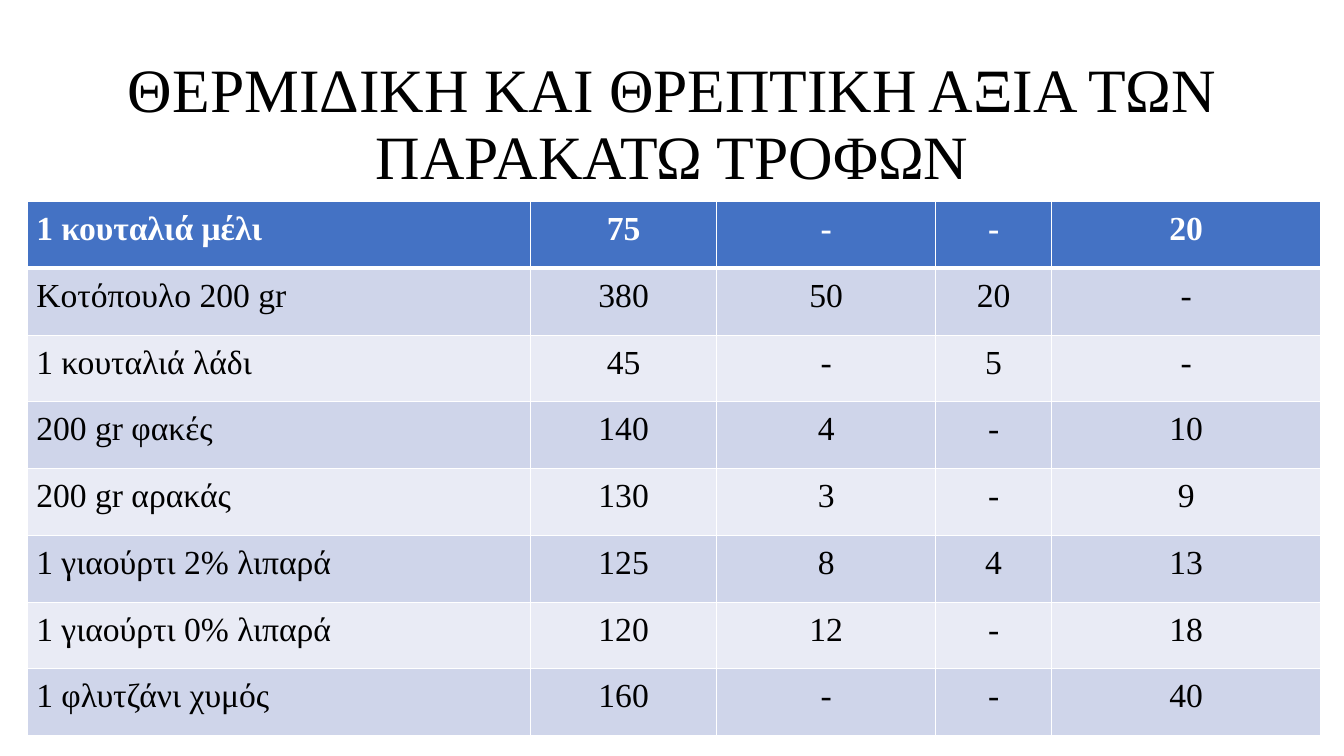
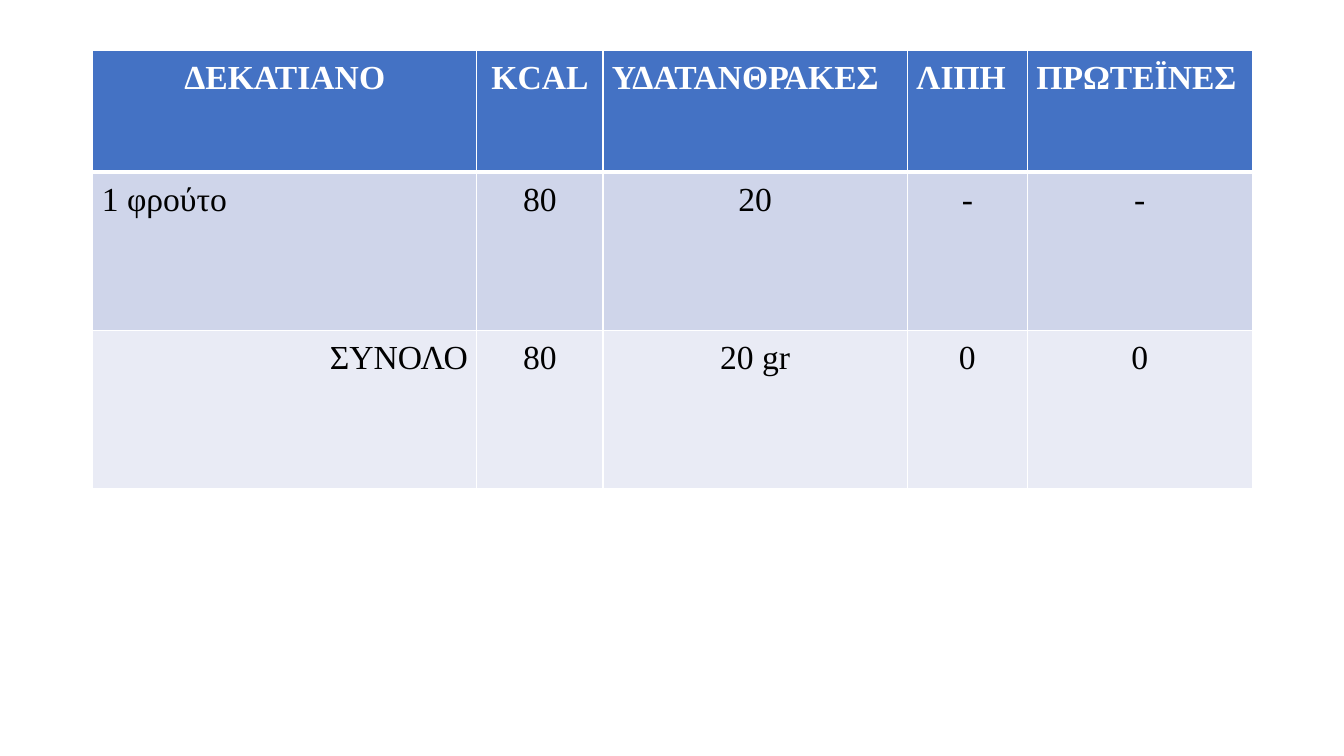
import pptx
import pptx.util
import pptx.dml.color
import pptx.enum.text
import pptx.oxml
import pptx.oxml.ns

Inches = pptx.util.Inches
Pt = pptx.util.Pt

FONT = "Times New Roman"
COLORS = {
    "header": "4472C4",
    "band_dark": "CFD5EA",
    "band_light": "E9EBF5",
    "white": "FFFFFF",
    "black": "000000",
}
ALIGN = {
    "l": pptx.enum.text.PP_ALIGN.LEFT,
    "c": pptx.enum.text.PP_ALIGN.CENTER,
    "r": pptx.enum.text.PP_ALIGN.RIGHT,
}
CELL_MARGIN = 0.09

# Each row: alignment of its cells, then their texts
FOOD_ROWS = [
    ("lcccc", ["1 κουταλιά μέλι", "75", "-", "-", "20"]),
    ("lcccc", ["Κοτόπουλο 200 gr", "380", "50", "20", "-"]),
    ("lcccc", ["1 κουταλιά λάδι", "45", "-", "5", "-"]),
    ("lcccc", ["200 gr φακές", "140", "4", "-", "10"]),
    ("lcccc", ["200 gr αρακάς", "130", "3", "-", "9"]),
    ("lcccc", ["1 γιαούρτι 2% λιπαρά", "125", "8", "4", "13"]),
    ("lcccc", ["1 γιαούρτι 0% λιπαρά", "120", "12", "-", "18"]),
    ("lcccc", ["1 φλυτζάνι χυμός", "160", "-", "-", "40"]),
]
SNACK_ROWS = [
    ("cclll", ["ΔΕΚΑΤΙΑΝΟ", "KCAL", "ΥΔΑΤΑΝΘΡΑΚΕΣ", "ΛΙΠΗ", "ΠΡΩΤΕΪΝΕΣ"]),
    ("lcccc", ["1 φρούτο", "80", "20", "-", "-"]),
    ("rcccc", ["ΣΥΝΟΛΟ", "80", "20 gr", "0", "0"]),
]


def color(name):
    return pptx.dml.color.RGBColor.from_string(COLORS[name])


def write_text(para, text, size, color_name, align, bold=False):
    para.alignment = ALIGN[align]
    span = para.add_run()
    span.text = text
    span.font.name = FONT
    span.font.size = Pt(size)
    span.font.bold = bold
    span.font.color.rgb = color(color_name)


def set_borders(cell, top, bottom):
    """White cell borders; top and bottom widths in points."""
    properties = cell._tc.get_or_add_tcPr()
    sides = [("lnL", 1), ("lnR", 1), ("lnT", top), ("lnB", bottom)]
    for index, (side, width) in enumerate(sides):
        line = pptx.oxml.parse_xml(
            f'<a:{side} {pptx.oxml.ns.nsdecls("a")} w="{Pt(width)}"><a:solidFill>'
            f'<a:srgbClr val="{COLORS["white"]}"/></a:solidFill></a:{side}>'
        )
        properties.insert(index, line)


def add_title(page, box, text):
    title = page.shapes.title
    title.left, title.top, title.width, title.height = map(Inches, box)
    frame = title.text_frame
    frame.word_wrap = True
    frame.auto_size = pptx.enum.text.MSO_AUTO_SIZE.NONE
    frame.vertical_anchor = pptx.enum.text.MSO_ANCHOR.MIDDLE
    para = frame.paragraphs[0]
    para.line_spacing = 0.9
    write_text(para, text, 44, "black", "c")


def format_cell(cell, row_index, text, align):
    header = row_index == 0
    fill = "header" if header else ("band_light", "band_dark")[row_index % 2]
    cell.fill.solid()
    cell.fill.fore_color.rgb = color(fill)
    cell.margin_left = cell.margin_right = Inches(CELL_MARGIN)
    cell.margin_top = cell.margin_bottom = Inches(CELL_MARGIN)
    set_borders(cell, top=3 if row_index == 1 else 1, bottom=3 if header else 1)
    para = cell.text_frame.paragraphs[0]
    write_text(para, text, 24, "white" if header else "black", align, bold=header)


def add_banded_table(page, left, top, widths, heights, rows):
    box = map(Inches, (left, top, sum(widths), sum(heights)))
    table = page.shapes.add_table(len(rows), len(widths), *box).table
    for column, width in zip(table.columns, widths):
        column.width = Inches(width)
    for row_index, (aligns, texts) in enumerate(rows):
        table.rows[row_index].height = Inches(heights[row_index])
        for column_index, (align, text) in enumerate(zip(aligns, texts)):
            format_cell(table.cell(row_index, column_index), row_index, text, align)


def build_food_page(deck):
    page = deck.slides.add_slide(deck.slide_layouts.get_by_name("Title Only"))
    add_title(page, (0.92, 0.43, 11.5, 1.64),
              "ΘΕΡΜΙΔΙΚΗ ΚΑΙ ΘΡΕΠΤΙΚΗ ΑΞΙΑ ΤΩΝ ΠΑΡΑΚΑΤΩ ΤΡΟΦΩΝ")
    add_banded_table(page, 0.27, 2, [4.99, 1.85, 2.17, 1.15, 2.67],
                     [5.3 / len(FOOD_ROWS)] * len(FOOD_ROWS), FOOD_ROWS)


def build_snack_page(deck):
    page = deck.slides.add_slide(deck.slide_layouts.get_by_name("Blank"))
    add_banded_table(page, 0.92, 0.5, [3.81, 1.25, 3.02, 1.19, 2.23],
                     [1.21, 1.57, 1.57], SNACK_ROWS)


def main():
    deck = pptx.Presentation()
    deck.slide_width, deck.slide_height = Inches(13.33), Inches(7.5)
    build_food_page(deck)
    build_snack_page(deck)
    deck.save("out.pptx")


if __name__ == "__main__":
    main()
